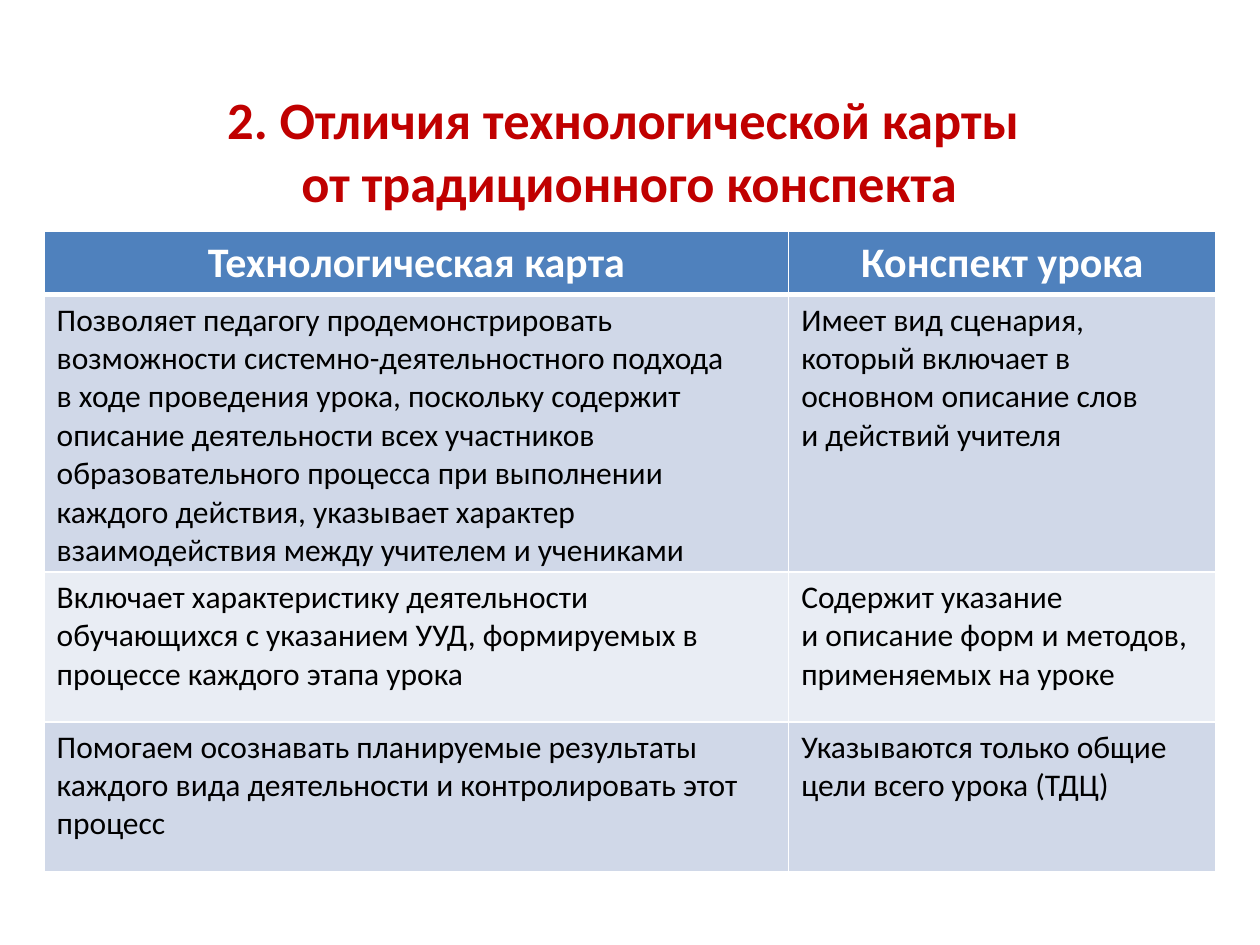
from typing import NamedTuple

import pptx
import pptx.dml.color
import pptx.enum.text
import pptx.oxml
import pptx.oxml.ns
import pptx.util

Cm, Pt = pptx.util.Cm, pptx.util.Pt
ALIGN = pptx.enum.text.PP_ALIGN


class TextStyle(NamedTuple):
    size: int
    color: str
    bold: bool
    align: ALIGN


class ComparisonRow(NamedTuple):
    height: float
    fill: str
    style: TextStyle
    map_text: str
    plan_text: str


TITLE = TextStyle(30, "C00000", True, ALIGN.CENTER)
HEADER = TextStyle(24, "FFFFFF", True, ALIGN.CENTER)
BODY = TextStyle(18, "000000", False, ALIGN.LEFT)

COLUMN_WIDTHS = (15.01, 8.61)
COMPARISON = (
    ComparisonRow(1.22, "4F81BD", HEADER, "Технологическая карта", "Конспект урока"),
    ComparisonRow(
        5.41, "D0D8E8", BODY,
        "Позволяет педагогу продемонстрировать возможности "
        "системно-деятельностного подхода \vв ходе проведения урока, "
        "поскольку содержит описание деятельности всех участников "
        "образовательного процесса при выполнении каждого действия, "
        "указывает характер взаимодействия между учителем и учениками",
        "Имеет вид сценария, который включает в основном описание слов "
        "\vи действий учителя"),
    ComparisonRow(
        3.02, "E9EDF4", BODY,
        "Включает характеристику деятельности обучающихся с указанием УУД, "
        "формируемых в процессе каждого этапа урока",
        "Содержит указание \vи описание форм и методов, применяемых на уроке"),
    ComparisonRow(
        3.02, "D0D8E8", BODY,
        "Помогаем осознавать планируемые результаты каждого вида "
        "деятельности и контролировать этот процесс",
        "Указываются только общие цели всего урока (ТДЦ)"),
)


def rgb(value: str) -> pptx.dml.color.RGBColor:
    return pptx.dml.color.RGBColor.from_string(value)


def write(frame: pptx.text.text.TextFrame, text: str, style: TextStyle) -> None:
    frame.text = text
    paragraph = frame.paragraphs[0]
    paragraph.alignment = style.align
    font_format = {"name": "Calibri", "size": Pt(style.size), "bold": style.bold}
    for run in paragraph.runs:
        for attribute, value in font_format.items():
            setattr(run.font, attribute, value)
        run.font.color.rgb = rgb(style.color)


def add_borders(cell: pptx.table._Cell, bottom: int, top: int) -> None:
    """Draw white borders, with widths in points; the sides are 1 pt."""
    widths = {"lnL": 1, "lnR": 1, "lnT": top, "lnB": bottom}
    properties = cell._tc.get_or_add_tcPr()
    for position, (side, width) in enumerate(widths.items()):
        properties.insert(position, pptx.oxml.parse_xml(
            f'<a:{side} {pptx.oxml.ns.nsdecls("a")} w="{Pt(width)}">'
            '<a:solidFill><a:srgbClr val="FFFFFF"/></a:solidFill>'
            f'</a:{side}>'))


def add_title(slide: pptx.slide.Slide) -> None:
    box = slide.shapes.add_textbox(Cm(0.69), Cm(2.03), Cm(24), Cm(2.01))
    frame = box.text_frame
    frame.word_wrap = True
    frame.vertical_anchor = pptx.enum.text.MSO_ANCHOR.MIDDLE
    write(frame, "2. Отличия технологической карты \vот традиционного конспекта", TITLE)


def add_comparison(slide: pptx.slide.Slide) -> None:
    table = slide.shapes.add_table(
        len(COMPARISON), len(COLUMN_WIDTHS), Cm(0.89), Cm(4.67),
        Cm(sum(COLUMN_WIDTHS)), Cm(sum(row.height for row in COMPARISON))).table
    for column, width in zip(table.columns, COLUMN_WIDTHS):
        column.width = Cm(width)
    for index, (table_row, row) in enumerate(zip(table.rows, COMPARISON)):
        table_row.height = Cm(row.height)
        for cell, text in zip(table_row.cells, (row.map_text, row.plan_text)):
            write(cell.text_frame, text, row.style)
            cell.fill.solid()
            cell.fill.fore_color.rgb = rgb(row.fill)
            add_borders(cell, bottom=3 if index == 0 else 1, top=3 if index == 1 else 1)


def main() -> None:
    presentation = pptx.Presentation()
    presentation.slide_width, presentation.slide_height = Cm(25.4), Cm(19.05)
    slide = presentation.slides.add_slide(presentation.slide_layouts[6])
    add_title(slide)
    add_comparison(slide)
    presentation.save("out.pptx")


if __name__ == "__main__":
    main()
